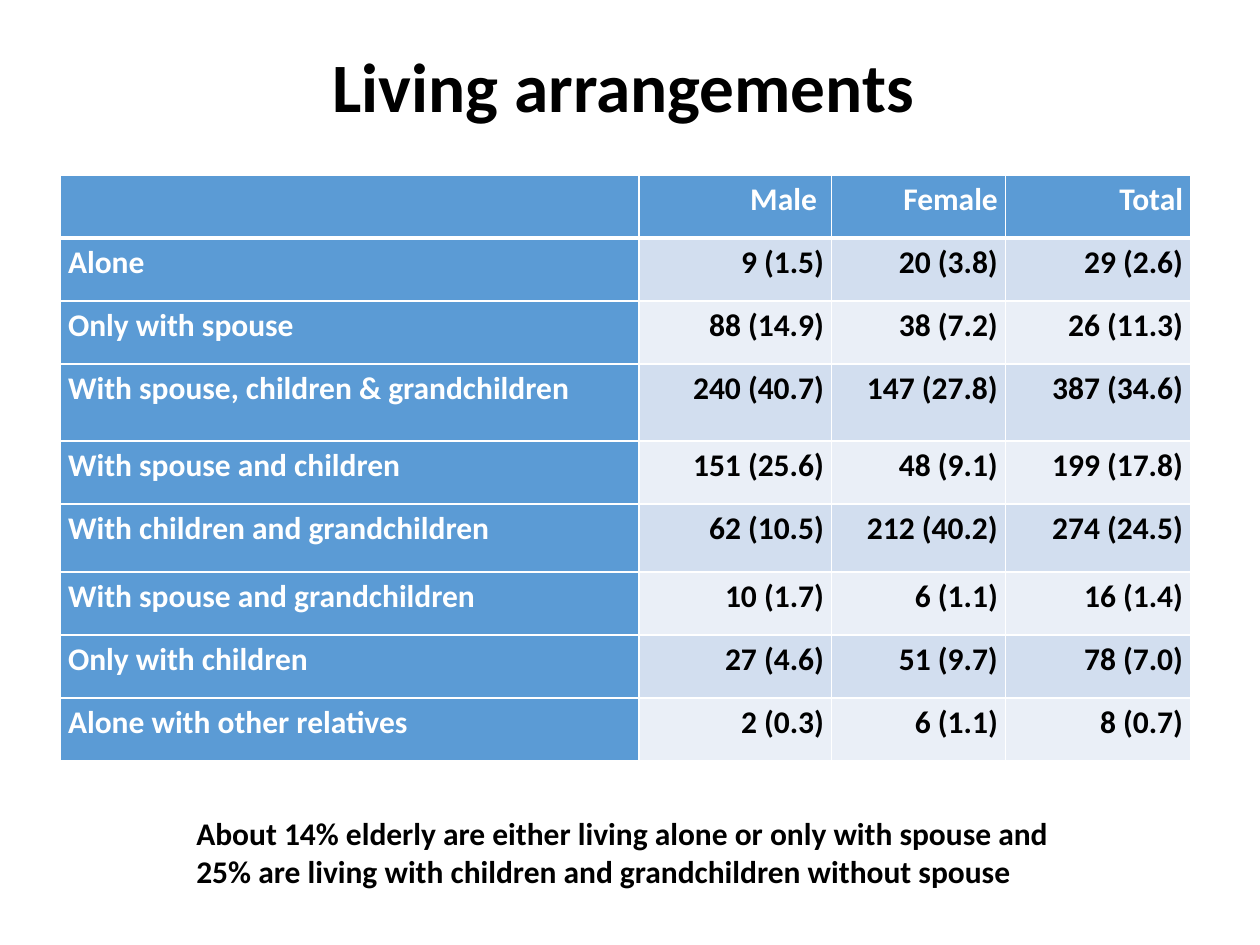
from lxml.etree import SubElement
from pptx import Presentation
from pptx.dml.color import RGBColor
from pptx.enum.text import MSO_ANCHOR, PP_ALIGN
from pptx.oxml.ns import qn
from pptx.util import Inches, Pt

BLUE, WHITE, BLACK = "5B9BD5", "FFFFFF", "000000"
BANDS = ("D2DEEF", "EAEFF7")
COLUMN_WIDTHS = (4.59, 1.53, 1.38, 1.47)
ROW_HEIGHTS = (0.5, 0.5, 0.5, 0.61, 0.5, 0.54, 0.5, 0.5, 0.5)
ARRANGEMENTS = (
    ("", "Male ", "Female", "Total"),
    ("Alone", "9 (1.5)", "20 (3.8)", "29 (2.6)"),
    ("Only with spouse", "88 (14.9)", "38 (7.2)", "26 (11.3)"),
    ("With spouse, children & grandchildren", "240 (40.7)", "147 (27.8)", "387 (34.6)"),
    ("With spouse and children", "151 (25.6)", "48 (9.1)", "199 (17.8)"),
    ("With children and grandchildren", "62 (10.5)", "212 (40.2)", "274 (24.5)"),
    ("With spouse and grandchildren", "10 (1.7)", "6 (1.1)", "16 (1.4)"),
    ("Only with children", "27 (4.6)", "51 (9.7)", "78 (7.0)"),
    ("Alone with other relatives", "2 (0.3)", "6 (1.1)", "8 (0.7)"),
)


def color(value):
    return RGBColor.from_string(value)


def apply(target, values):
    for name, value in values.items():
        setattr(target, name, value)


def write(paragraph, text, text_color, size=18, **layout):
    run = paragraph.add_run()
    run.text = text
    apply(run.font, {"name": "Calibri", "size": Pt(size), "bold": True})
    run.font.color.rgb = color(text_color)
    apply(paragraph, layout)


def add_text(slide, box, text, size=18, anchor=MSO_ANCHOR.TOP, **layout):
    frame = slide.shapes.add_textbox(*map(Inches, box)).text_frame
    apply(frame, {"word_wrap": True, "vertical_anchor": anchor})
    write(frame.paragraphs[0], text, BLACK, size, **layout)


def add_borders(cell, top, bottom):
    properties = cell._tc.get_or_add_tcPr()
    for side, width in (("L", 1), ("R", 1), ("T", top), ("B", bottom)):
        line = SubElement(properties, qn(f"a:ln{side}"), w=str(Pt(width)))
        fill = SubElement(line, qn("a:solidFill"))
        SubElement(fill, qn("a:srgbClr"), val=WHITE)


def format_cell(cell, text, row, column):
    is_heading = row == 0 or column == 0
    margins = {"margin_left": 0.06, "margin_right": 0.06, "margin_top": 0, "margin_bottom": 0}
    apply(cell, {name: Inches(value) for name, value in margins.items()})
    add_borders(cell, 3 if row == 1 else 1, 3 if row == 0 else 1)
    cell.fill.solid()
    cell.fill.fore_color.rgb = color(BLUE if is_heading else BANDS[(row - 1) % 2])
    if text:
        write(cell.text_frame.paragraphs[0], text, WHITE if is_heading else BLACK,
              alignment=PP_ALIGN.RIGHT if column else PP_ALIGN.LEFT, line_spacing=1.15)


def add_arrangements_table(slide, left, top):
    box = (left, top, sum(COLUMN_WIDTHS), sum(ROW_HEIGHTS))
    table = slide.shapes.add_table(
        len(ROW_HEIGHTS), len(COLUMN_WIDTHS), *map(Inches, box)).table
    for column, width in zip(table.columns, COLUMN_WIDTHS):
        column.width = Inches(width)
    for row, height in zip(table.rows, ROW_HEIGHTS):
        row.height = Inches(height)
    for row, texts in enumerate(ARRANGEMENTS):
        for column, text in enumerate(texts):
            format_cell(table.cell(row, column), text, row, column)


def main():
    presentation = Presentation()
    apply(presentation, {"slide_width": Inches(10), "slide_height": Inches(7.5)})
    slide = presentation.slides.add_slide(presentation.slide_layouts[6])
    add_text(slide, (0.7, 0.34, 8.62, 0.75), "Living arrangements ", 39.6,
             MSO_ANCHOR.MIDDLE, alignment=PP_ALIGN.CENTER, line_spacing=0.9)
    add_arrangements_table(slide, 0.48, 1.39)
    add_text(slide, (1.46, 6.41, 7.04, 0.71),
             "About 14% elderly are either living alone or only with spouse and "
             "25% are living with children and grandchildren without spouse")
    presentation.save("out.pptx")


if __name__ == "__main__":
    main()
